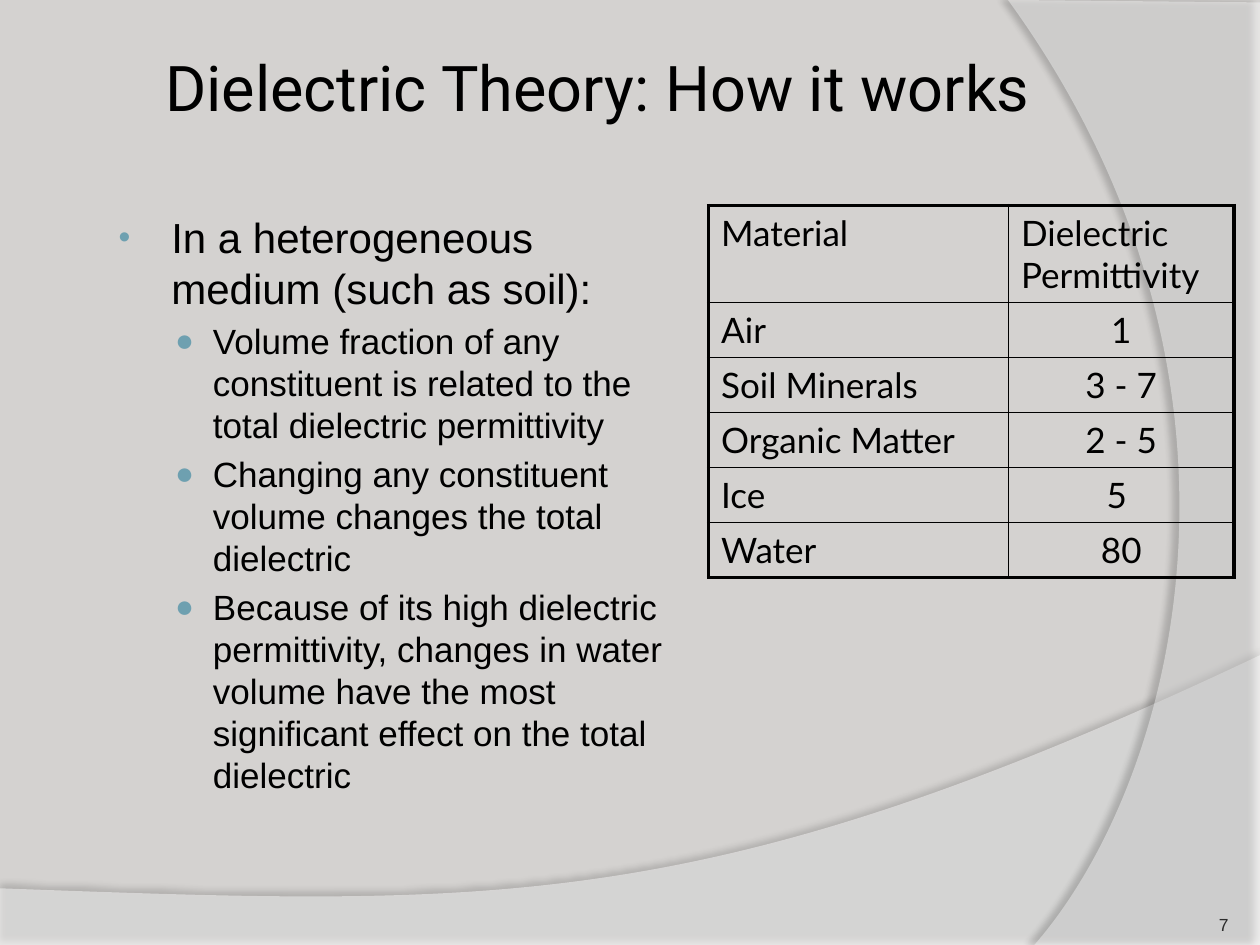
from lxml.etree import SubElement
from pptx import Presentation
from pptx.dml.color import RGBColor
from pptx.enum.text import MSO_ANCHOR, MSO_AUTO_SIZE, PP_ALIGN
from pptx.oxml.ns import qn
from pptx.util import Pt

TITLE = "Dielectric Theory: How it works"
POINTS = [
    (0, "In a heterogeneous medium (such as soil):"),
    (1, "Volume fraction of any constituent is related to the total dielectric permittivity"),
    (1, "Changing any constituent volume changes the total dielectric"),
    (1, "Because of its high dielectric permittivity, changes in water volume "
        "have the most significant effect on the total dielectric"),
]
PERMITTIVITY = [
    ("Material", "Dielectric Permittivity"),
    ("Air", "1"),
    ("Soil Minerals", "3 - 7"),
    ("Organic Matter", "2 - 5"),
    ("Ice", "5 "),
    ("Water", "80"),
]
PAGE_NUMBER = "7"

THEME = {
    "background": "D4D2D0", "wave": "FFFFFF", "ink": "000000",
    "bullet": "6EA0B0", "page": "2C2C2C",
    "title_font": "Roboto", "body_font": "Arial", "table_font": "Lato",
    "title_size": 36, "table_size": 20, "page_size": 10,
    "outer_border": 2.25, "inner_border": 1,
}
LEVELS = [
    {"size": 24, "margin": 33.1, "indent": -30.2, "bullet": "•", "bullet_size": 80},
    {"size": 20, "margin": 56.9, "indent": -21.6, "bullet": "●", "bullet_size": 90},
]
WAVES = [
    {"start": (720, 374.4), "controls": [(402.5, 524.9), (281.5, 517.7)], "end": (0, 507.6),
     "corners": [(0, 540.7), (720, 540.7)],
     "opacity": 45, "shadow_opacity": 35, "distance": 3.5, "direction": 270},
    {"start": (591.1, 540), "controls": [(673.2, 445.7), (733, 216)], "end": (576, 0),
     "corners": [(720, 1.4), (720, 540)],
     "opacity": 40, "shadow_opacity": 45, "distance": 4, "direction": 180},
]
SHADOW_BLUR = 4
COLUMN_WIDTHS = [171.4, 128.9]
HEADER_HEIGHT, ROW_HEIGHT = 55.5, 31.4


def apply(target, values):
    for name, value in values.items():
        setattr(target, name, value)


def place(shape, left, top, width, height):
    apply(shape, {"left": Pt(left), "top": Pt(top), "width": Pt(width), "height": Pt(height)})


def style(font, family, size, color):
    apply(font, {"name": family, "size": Pt(size), "bold": False})
    font.color.rgb = RGBColor.from_string(THEME[color])


def add_element(parent, tag, **attributes):
    return SubElement(parent, qn(tag), {key: str(value) for key, value in attributes.items()})


def add_opacity(color, percent):
    add_element(color, "a:alpha", val=percent * 1000)


def bend_first_side(shape, controls):
    side = next(shape.element.iter(qn("a:lnTo")))
    outline = side.getparent()
    curve = add_element(outline, "a:cubicBezTo")
    for x, y in controls:
        add_element(curve, "a:pt", x=Pt(x) - shape.left, y=Pt(y) - shape.top)
    curve.append(side[0])
    outline.replace(side, curve)


def add_wave(slide, wave, depth):
    start, *others = [(Pt(x), Pt(y)) for x, y in [wave["start"], wave["end"], *wave["corners"]]]
    builder = slide.shapes.build_freeform(*start)
    builder.add_line_segments(others, close=True)
    shape = builder.convert_to_shape()
    bend_first_side(shape, wave["controls"])
    shape.fill.solid()
    shape.fill.fore_color.rgb = RGBColor.from_string(THEME["wave"])
    shape.line.fill.background()
    shape.shadow.inherit = False
    properties = shape.element.spPr
    add_opacity(properties.find(qn("a:solidFill"))[0], wave["opacity"])
    shadow = add_element(properties.find(qn("a:effectLst")), "a:outerShdw",
                         blurRad=Pt(SHADOW_BLUR), dist=Pt(wave["distance"]),
                         dir=wave["direction"] * 60000, algn="ctr", rotWithShape=0)
    add_opacity(add_element(shadow, "a:srgbClr", val=THEME["ink"]), wave["shadow_opacity"])
    slide.shapes.element.insert(2 + depth, shape.element)


def fill_title(title):
    place(title, 90.7, 10.8, 629.3, 77)
    frame = title.text_frame
    apply(frame, {"text": TITLE, "auto_size": MSO_AUTO_SIZE.NONE,
                  "vertical_anchor": MSO_ANCHOR.MIDDLE,
                  **{f"margin_{side}": Pt(3.6) for side in ("left", "right", "top", "bottom")}})
    frame.paragraphs[0].alignment = PP_ALIGN.LEFT
    style(frame.paragraphs[0].font, THEME["title_font"], THEME["title_size"], "ink")


def fill_body(body):
    place(body, 57.6, 117.4, 331.2, 391.7)
    frame = body.text_frame
    frame.auto_size = MSO_AUTO_SIZE.NONE
    for index, (depth, text) in enumerate(POINTS):
        level = LEVELS[depth]
        paragraph = frame.add_paragraph() if index else frame.paragraphs[0]
        apply(paragraph, {"text": text, "level": depth, "line_spacing": 1.0,
                          "space_before": Pt(level["size"] * 0.2 if index else 0)})
        properties = paragraph._p.get_or_add_pPr()
        properties.set("marL", str(Pt(level["margin"])))
        properties.set("indent", str(Pt(level["indent"])))
        add_element(add_element(properties, "a:buClr"), "a:srgbClr", val=THEME["bullet"])
        add_element(properties, "a:buSzPct", val=level["bullet_size"] * 1000)
        add_element(properties, "a:buFont", typeface=THEME["body_font"])
        add_element(properties, "a:buChar", char=level["bullet"])
        style(paragraph.font, THEME["body_font"], level["size"], "ink")


def add_borders(cell, outer_sides):
    properties = cell._tc.get_or_add_tcPr()
    for side, is_outer in outer_sides.items():
        width = THEME["outer_border" if is_outer else "inner_border"]
        line = add_element(properties, f"a:ln{side}", w=Pt(width))
        add_element(add_element(line, "a:solidFill"), "a:srgbClr", val=THEME["ink"])


def add_permittivity_table(slide):
    last_row, last_column = len(PERMITTIVITY) - 1, len(COLUMN_WIDTHS) - 1
    heights = [HEADER_HEIGHT] + [ROW_HEIGHT] * last_row
    table = slide.shapes.add_table(
        len(heights), len(COLUMN_WIDTHS), Pt(404.9), Pt(117.5),
        Pt(sum(COLUMN_WIDTHS)), Pt(sum(heights))).table
    apply(table, {"first_row": False, "horz_banding": False})
    for column, width in zip(table.columns, COLUMN_WIDTHS):
        column.width = Pt(width)
    for r, (row, height) in enumerate(zip(PERMITTIVITY, heights)):
        table.rows[r].height = Pt(height)
        for c, text in enumerate(row):
            cell = table.cell(r, c)
            cell.text = text
            add_borders(cell, {"L": c == 0, "R": c == last_column,
                               "T": r == 0, "B": r == last_row})
            cell.fill.background()
            paragraph = cell.text_frame.paragraphs[0]
            paragraph.alignment = PP_ALIGN.CENTER if r and c else PP_ALIGN.LEFT
            style(paragraph.font, THEME["table_font"], THEME["table_size"], "ink")


def add_page_number(slide):
    frame = slide.shapes.add_textbox(Pt(642.2), Pt(505.4), Pt(59.8), Pt(28.8)).text_frame
    apply(frame, {"text": PAGE_NUMBER, "word_wrap": True, "vertical_anchor": MSO_ANCHOR.BOTTOM,
                  **{f"margin_{side}": 0 for side in ("left", "right", "top", "bottom")}})
    frame.paragraphs[0].alignment = PP_ALIGN.RIGHT
    style(frame.paragraphs[0].font, THEME["body_font"], THEME["page_size"], "page")


def main():
    deck = Presentation()
    apply(deck, {"slide_width": Pt(720), "slide_height": Pt(540)})
    slide = deck.slides.add_slide(deck.slide_layouts[1])
    slide.background.fill.solid()
    slide.background.fill.fore_color.rgb = RGBColor.from_string(THEME["background"])
    for depth, wave in enumerate(WAVES):
        add_wave(slide, wave, depth)
    fill_title(slide.shapes.title)
    fill_body(slide.placeholders[1])
    add_permittivity_table(slide)
    add_page_number(slide)
    deck.save("out.pptx")


if __name__ == "__main__":
    main()
